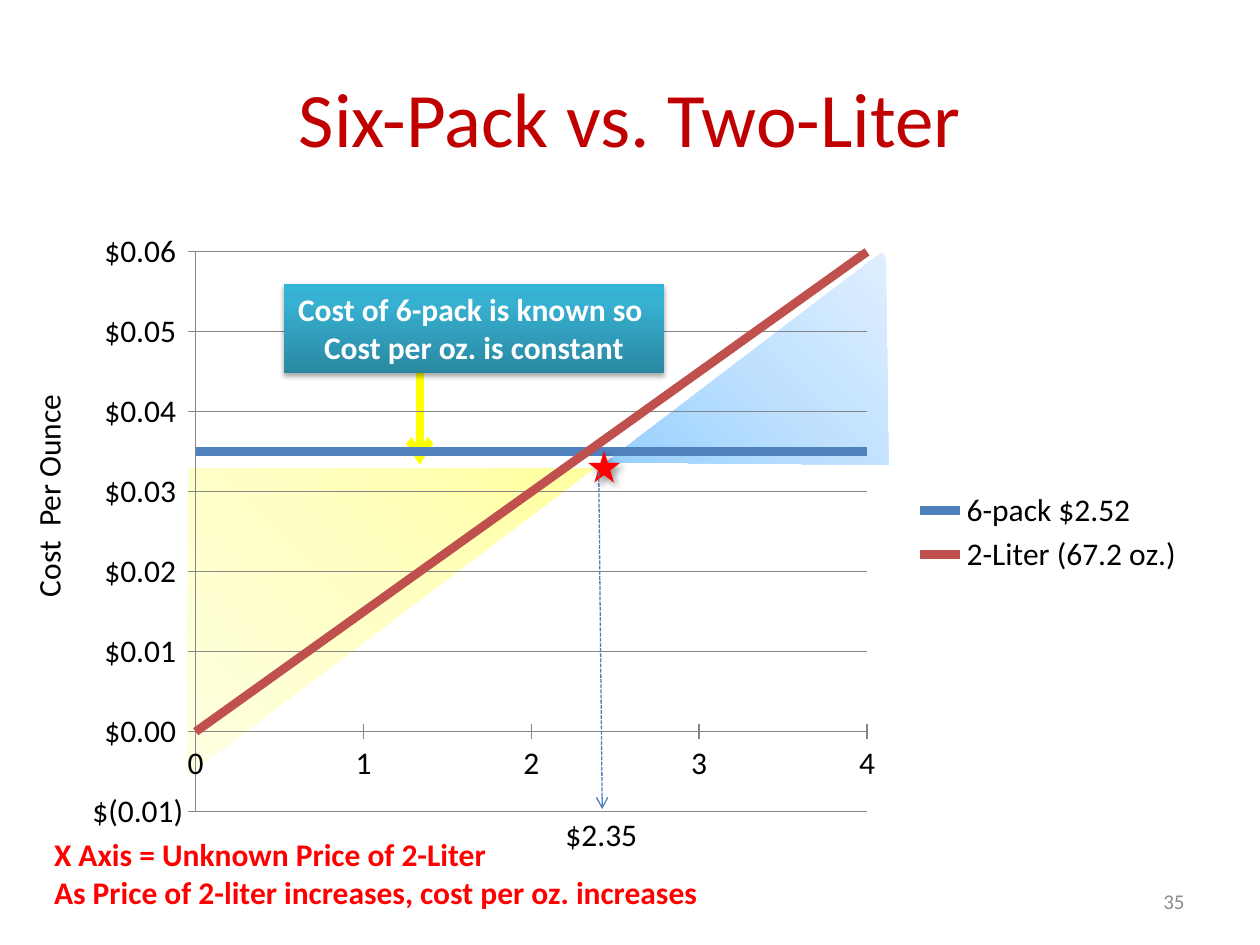
"""Build the six-pack versus two-liter cost comparison slide."""
from lxml import etree
from pptx import Presentation
from pptx.chart.data import CategoryChartData
from pptx.dml.color import RGBColor
from pptx.enum.chart import XL_CHART_TYPE, XL_LEGEND_POSITION, XL_TICK_MARK
from pptx.enum.dml import MSO_LINE
from pptx.enum.shapes import MSO_CONNECTOR, MSO_SHAPE
from pptx.enum.text import MSO_ANCHOR, PP_ALIGN
from pptx.oxml import parse_xml
from pptx.oxml.ns import qn
from pptx.util import Cm, Pt

LINE_CHART, LEGEND_RIGHT = XL_CHART_TYPE.LINE, XL_LEGEND_POSITION.RIGHT
TICK_CROSS, DASHED, STRAIGHT = XL_TICK_MARK.CROSS, MSO_LINE.SQUARE_DOT, MSO_CONNECTOR.STRAIGHT
STAR, RECTANGLE = MSO_SHAPE.STAR_5_POINT, MSO_SHAPE.RECTANGLE
TOP, MIDDLE = MSO_ANCHOR.TOP, MSO_ANCHOR.MIDDLE
LEFT, CENTER, RIGHT = PP_ALIGN.LEFT, PP_ALIGN.CENTER, PP_ALIGN.RIGHT

BLACK, WHITE = RGBColor(0, 0, 0), RGBColor(255, 255, 255)
RED, DARK_RED = RGBColor(255, 0, 0), RGBColor(0xC0, 0, 0)
YELLOW, GRAY = RGBColor(255, 255, 0), RGBColor(0x8C, 0x8C, 0x8C)
GRID = RGBColor(0x86, 0x86, 0x86)
BLUE, BRICK = RGBColor(0x4F, 0x81, 0xBD), RGBColor(0xC0, 0x50, 0x4D)
GUIDE_BLUE = RGBColor(0x4B, 0x7E, 0xBC)
FONT = "Calibri"
DRAWING = 'xmlns:a="http://schemas.openxmlformats.org/drawingml/2006/main"'

PRICES = [0, 1, 2, 3, 4]
SERIES = [
    ("6-pack $2.52", [0.035] * 5, BLUE),
    ("2-Liter (67.2 oz.)", [0, 0.015, 0.03, 0.045, 0.06], BRICK),
]
CHART_AREA = (1.27, 4.45, 22.86, 12.57)
PLOT_LAYOUT = {"x": 0.117, "y": 0.05, "w": 0.592, "h": 0.898}
MONEY_FORMAT = '"$"#,##0.00_);"$"\\(#,##0.00\\)'

CORNER_SHADE = '<a:path path="circle"><a:fillToRect {}="100000" {}="100000"/></a:path>'
REGIONS = [
    ([(17.78, 5.08), (12.22, 9.32), (17.91, 9.37), (17.86, 5.21)],
     [(0, "96D0FF"), (50, "BFE1FF"), (100, "E0EFFF")], CORNER_SHADE.format("t", "r")),
    ([(3.81, 9.45), (3.76, 15.65), (11.96, 9.45)],
     [(0, "FFFFA0"), (50, "FFFFC5"), (100, "FFFFE3")], CORNER_SHADE.format("l", "b")),
]
CALLOUT_STOPS = [(0, "2A88A2"), (80, "37B1D2"), (100, "34B4D6")]
CALLOUT_LINES = ["Cost of 6-pack is known so ", "Cost per oz. is constant"]
TITLE = ["Six-Pack vs. Two-Liter"]
NOTES = ["X Axis = Unknown Price of 2-Liter",
         "As Price of 2-liter increases, cost per oz. increases"]
LABELS = [
    (NOTES, (0.84, 16.71, 13.59, 1.8), {"color": RED, "bold": True}),
    (["Cost  Per Ounce"], (-1.35, 9.45, 4.65, 1.02), {"rotation": 270}),
]
BREAK_EVEN = (["$2.35"], (11.15, 16.31, 1.98, 1.02), {})
PAGE_NUMBER = (["35"], (18.21, 17.65, 5.92, 1.02),
               {"size": 12, "color": GRAY, "align": RIGHT, "anchor": MIDDLE, "wrap": True})


def lengths(values):
    return [Cm(value) for value in values]


def write_text(box, lines, size=18, color=BLACK, bold=False, align=LEFT,
               anchor=TOP, wrap=False, rotation=0):
    box.rotation = rotation
    frame = box.text_frame
    frame.word_wrap = wrap
    frame.vertical_anchor = anchor
    for index, line in enumerate(lines):
        para = frame.add_paragraph() if index else frame.paragraphs[0]
        para.alignment = align
        span = para.add_run()
        span.text = line
        span.font.name = FONT
        span.font.size = Pt(size)
        span.font.bold = bold
        span.font.color.rgb = color


def add_label(page, lines, area, style):
    write_text(page.shapes.add_textbox(*lengths(area)), lines, **style)


def set_gradient(shape, stops, direction):
    shape.fill.solid()
    marks = "".join(f'<a:gs pos="{place * 1000}"><a:srgbClr val="{color}"/></a:gs>'
                    for place, color in stops)
    gradient = parse_xml(f'<a:gradFill {DRAWING} rotWithShape="1">'
                         f"<a:gsLst>{marks}</a:gsLst>{direction}</a:gradFill>")
    properties = shape.element.spPr
    properties.replace(properties.find(qn("a:solidFill")), gradient)


def set_shadow(shape, opacity, blur, distance, angle):
    shape.shadow.inherit = False
    effects = shape.element.spPr.find(qn("a:effectLst"))
    effects.append(parse_xml(
        f'<a:outerShdw {DRAWING} blurRad="{Pt(blur)}" dist="{Pt(distance)}" '
        f'dir="{angle * 60000}" rotWithShape="0"><a:srgbClr val="000000">'
        f'<a:alpha val="{opacity * 1000}"/></a:srgbClr></a:outerShdw>'))


def add_arrow(page, ends, color, width, dash=None):
    arrow = page.shapes.add_connector(STRAIGHT, *lengths(ends))
    arrow.line.color.rgb = color
    arrow.line.width = Pt(width)
    if dash:
        arrow.line.dash_style = dash
    properties = arrow.element.spPr
    etree.SubElement(properties.find(qn("a:ln")), qn("a:tailEnd"), type="arrow")
    etree.SubElement(properties, qn("a:effectLst"))


def add_region(page, points, stops, direction):
    corners = [tuple(lengths(point)) for point in points]
    builder = page.shapes.build_freeform(*corners[0])
    builder.add_line_segments(corners[1:], close=True)
    region = builder.convert_to_shape()
    set_gradient(region, stops, direction)
    region.line.fill.background()
    region.shadow.inherit = False


def add_cost_chart(page):
    data = CategoryChartData(number_format="0.000")
    data.categories = PRICES
    for name, values, _ in SERIES:
        data.add_series(name, values)
    chart = page.shapes.add_chart(LINE_CHART, *lengths(CHART_AREA), data).chart
    chart.has_title = False
    chart.font.name = FONT
    chart.font.size = Pt(18)
    chart.font.color.rgb = BLACK
    chart.has_legend = True
    chart.legend.position = LEGEND_RIGHT
    chart.legend.include_in_layout = False
    chart.plots[0].vary_by_categories = False
    for series, (_, _, color) in zip(chart.plots[0].series, SERIES):
        series.smooth = False
        series.format.line.color.rgb = color
        series.format.line.width = Pt(5)
    scale = chart.value_axis
    scale.minimum_scale, scale.maximum_scale, scale.major_unit = -0.01, 0.06, 0.01
    scale.has_major_gridlines = True
    for axis, number_format in ((scale, MONEY_FORMAT), (chart.category_axis, '"$"0')):
        axis.major_tick_mark = TICK_CROSS
        axis.tick_labels.number_format = number_format
        axis.tick_labels.number_format_is_linked = False
    for part in (scale, chart.category_axis, scale.major_gridlines):
        part.format.line.color.rgb = GRID
        part.format.line.width = Pt(0.75)
    area = chart.element.find(".//" + qn("c:plotArea"))
    crossing = etree.Element(qn("c:crossBetween"), val="midCat")
    area.find(qn("c:valAx")).find(qn("c:majorUnit")).addprevious(crossing)
    layout = area.find(qn("c:layout"))
    if layout is None:
        layout = etree.Element(qn("c:layout"))
        area.insert(0, layout)
    manual = etree.SubElement(layout, qn("c:manualLayout"))
    settings = {"layoutTarget": "inner", "xMode": "edge", "yMode": "edge", **PLOT_LAYOUT}
    for name, value in settings.items():
        etree.SubElement(manual, qn("c:" + name), val=str(value))


def main():
    deck = Presentation()
    deck.slide_width, deck.slide_height = Cm(25.4), Cm(19.05)
    page = deck.slides.add_slide(deck.slide_layouts[6])
    add_arrow(page, (8.46, 7.52, 8.46, 9.37), YELLOW, 4.5)
    for region in REGIONS:
        add_region(page, *region)
    add_label(page, TITLE, (1.27, 0.76, 22.86, 3.18),
              {"size": 44, "color": DARK_RED, "align": CENTER, "anchor": MIDDLE, "wrap": True})
    add_cost_chart(page)
    for label in LABELS:
        add_label(page, *label)
    star = page.shapes.add_shape(STAR, *lengths((11.86, 9.09, 0.64, 0.64)))
    star.fill.solid()
    star.fill.fore_color.rgb = RED
    star.line.fill.background()
    set_shadow(star, 40, 4, 3, 45)
    add_arrow(page, (12.07, 9.53, 12.14, 16.31), GUIDE_BLUE, 0.75, DASHED)
    add_label(page, *BREAK_EVEN)
    callout = page.shapes.add_shape(RECTANGLE, *lengths((5.72, 5.72, 7.67, 1.8)))
    set_gradient(callout, CALLOUT_STOPS, '<a:lin ang="16200000" scaled="0"/>')
    callout.line.fill.background()
    set_shadow(callout, 35, 3.1, 1.8, 90)
    write_text(callout, CALLOUT_LINES, color=WHITE, bold=True, align=CENTER)
    add_label(page, *PAGE_NUMBER)
    deck.save("out.pptx")


if __name__ == "__main__":
    main()
